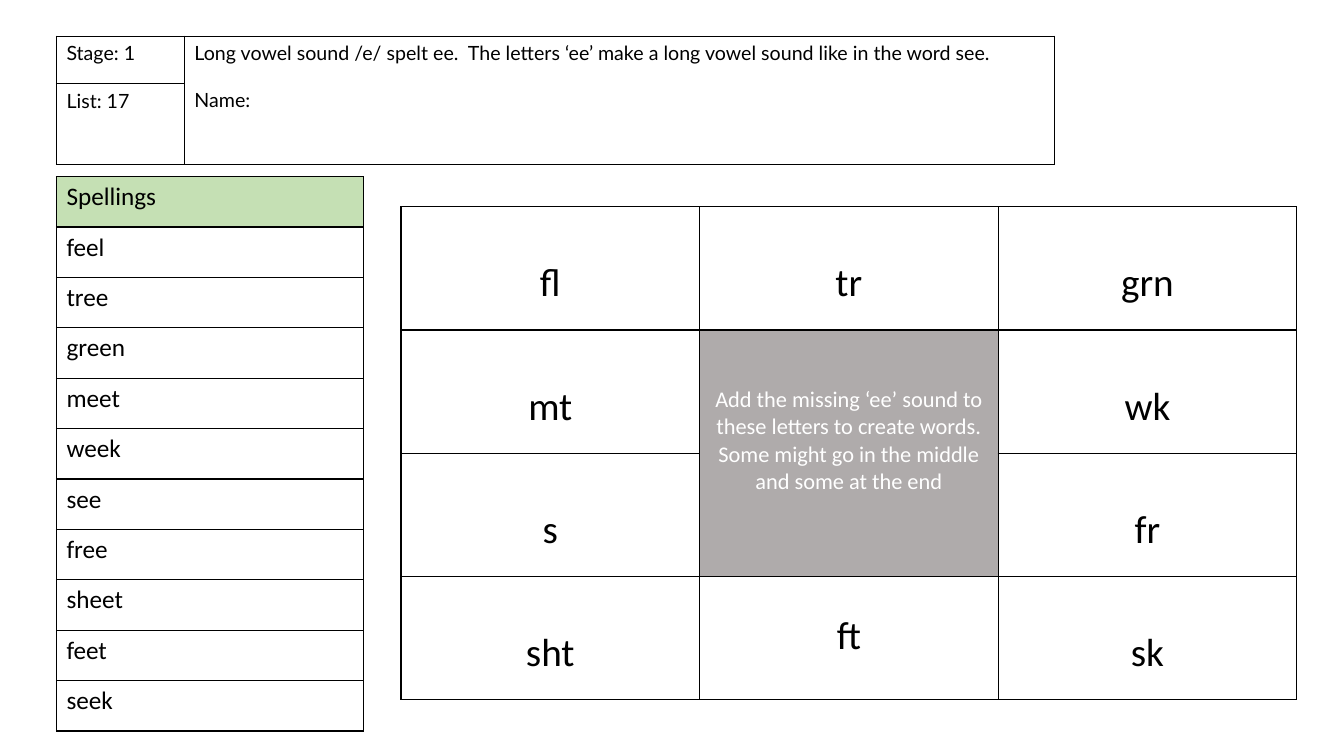
import pptx
import pptx.dml.color
import pptx.enum.text
import pptx.oxml.ns
import pptx.util
from lxml import etree

Pt = pptx.util.Pt
RGBColor = pptx.dml.color.RGBColor
ALIGN = pptx.enum.text.PP_ALIGN

BLACK = RGBColor(0x00, 0x00, 0x00)
WHITE = RGBColor(0xFF, 0xFF, 0xFF)
GREEN = RGBColor(0xC5, 0xE0, 0xB4)
GREY = RGBColor(0xAF, 0xAB, 0xAB)

SPELLINGS = ["feel", "tree", "green", "meet", "week", "see", "free", "sheet",
             "feet", "seek"]
LETTERS = [["fl", "tr", "grn"],
           ["mt", None, "wk"],
           ["s", None, "fr"],
           ["sht", "ft", "sk"]]
RULE = ("Long vowel sound /e/ spelt ee.  The letters ‘ee’ make a long vowel "
        "sound like in the word see.")
TASK = ("Add the missing ‘ee’ sound to these letters to create words. "
        "Some might go in the middle and some at the end")


def add_borders(cell):
    """Draw a thin black line on all four sides of a cell."""
    properties = cell._tc.get_or_add_tcPr()
    qn = pptx.oxml.ns.qn
    for side in ("a:lnL", "a:lnR", "a:lnT", "a:lnB"):
        line = etree.SubElement(properties, qn(side), w=str(Pt(1)))
        fill = etree.SubElement(line, qn("a:solidFill"))
        etree.SubElement(fill, qn("a:srgbClr"), val=str(BLACK))


def add_grid(slide, left, top, widths, heights):
    """Add a plain bordered table without fills."""
    frame = slide.shapes.add_table(len(heights), len(widths), Pt(left), Pt(top),
                                   Pt(sum(widths)), Pt(sum(heights)))
    table = frame.table
    table.first_row = False
    table.horz_banding = False
    for column, width in zip(table.columns, widths):
        column.width = Pt(width)
    for row, height in zip(table.rows, heights):
        row.height = Pt(height)
    for cell in table.iter_cells():
        add_borders(cell)
        cell.fill.background()
    return table


def write_cell(cell, lines, size, font="Calibri", color=BLACK,
               align=ALIGN.LEFT, margin_top=3.6, gap=0):
    """Write one paragraph per line, with a gap between paragraphs."""
    cell.margin_top = Pt(margin_top)
    for index, line in enumerate(lines):
        if index == 0:
            para = cell.text_frame.paragraphs[0]
        else:
            para = cell.text_frame.add_paragraph()
            para.space_before = Pt(gap)
        para.alignment = align
        span = para.add_run()
        span.text = line
        span.font.size = Pt(size)
        span.font.name = font
        span.font.color.rgb = color


def fill_cell(cell, color):
    cell.fill.solid()
    cell.fill.fore_color.rgb = color


def add_header(slide):
    table = add_grid(slide, 40.3, 25.9, [91.4, 621.4], [34, 57.9])
    table.cell(0, 1).merge(table.cell(1, 1))
    write_cell(table.cell(0, 0), ["Stage: 1"], 14, "Lato")
    write_cell(table.cell(1, 0), ["List: 17"], 14, "Lato")
    write_cell(table.cell(0, 1), [RULE, "Name:"], 14, "Lato", gap=17)


def add_spellings(slide):
    words = ["Spellings"] + SPELLINGS
    table = add_grid(slide, 40.3, 126.2, [219.6], [36] * len(words))
    for row, word in enumerate(words):
        write_cell(table.cell(row, 0), [word], 18)
    fill_cell(table.cell(0, 0), GREEN)


def add_letters(slide):
    table = add_grid(slide, 286.4, 147.6, [213.3] * 3, [88.1] * 4)
    for row, letters in enumerate(LETTERS):
        for column, text in enumerate(letters):
            if text:
                # The letters "ft" sit higher than the others
                margin_top = 25.6 if text == "ft" else 37.8
                write_cell(table.cell(row, column), [text], 28,
                           align=ALIGN.CENTER, margin_top=margin_top)

    # Instruction in the middle of the grid
    task = table.cell(1, 1)
    task.merge(table.cell(2, 1))
    write_cell(task, [TASK], 16, color=WHITE, align=ALIGN.CENTER,
               margin_top=40.2)
    fill_cell(task, GREY)


def main():
    deck = pptx.Presentation()
    deck.slide_width = Pt(960)
    deck.slide_height = Pt(540)
    slide = deck.slides.add_slide(deck.slide_layouts[6])
    add_spellings(slide)
    add_header(slide)
    add_letters(slide)
    deck.save("out.pptx")


if __name__ == "__main__":
    main()
